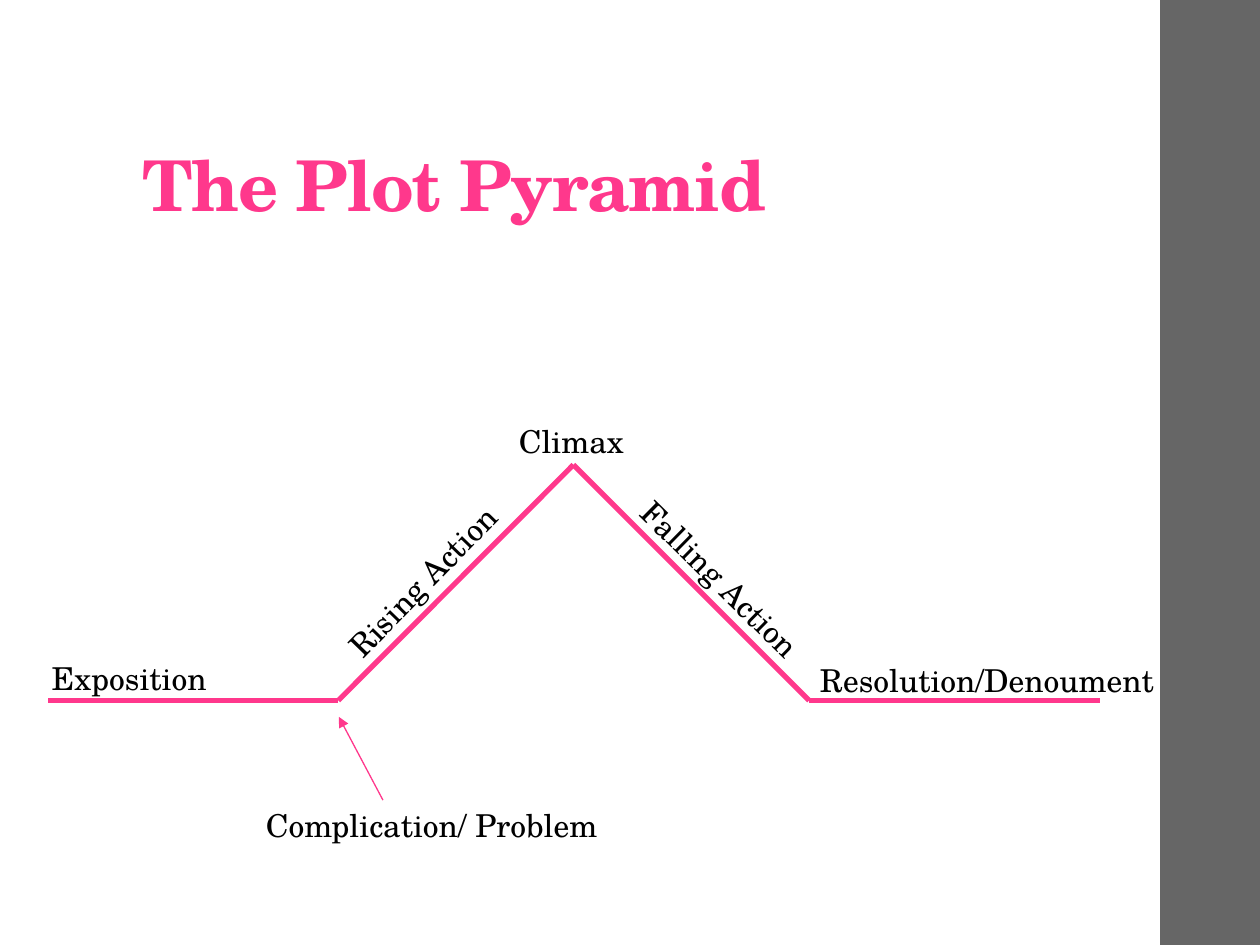
from dataclasses import dataclass
from itertools import pairwise

from pptx import Presentation
from pptx.dml.color import RGBColor
from pptx.enum.shapes import MSO_CONNECTOR, MSO_SHAPE
from pptx.enum.text import MSO_ANCHOR
from pptx.oxml.ns import qn
from pptx.oxml.xmlchemy import OxmlElement
from pptx.shapes.connector import Connector
from pptx.slide import Slide
from pptx.util import Cm, Pt

FONT = "TeX Gyre Schola"
PINK = "FF388C"
BLACK = "000000"
GRAY = "666666"

Point = tuple[float, float]


@dataclass(frozen=True)
class Label:
    text: str
    left: float
    top: float
    width: float
    height: float = 1.02
    rotation: float = 0
    size: float = 18
    color: str = BLACK
    bold: bool = False
    anchor: MSO_ANCHOR = MSO_ANCHOR.TOP
    line_spacing: float = 1.0
    tracking: float = 0


TITLE = Label("The Plot Pyramid", 2.62, 1.02, 20.19, 3.68, size=40, color=PINK,
              bold=True, anchor=MSO_ANCHOR.BOTTOM, line_spacing=0.9, tracking=-0.7)

STAGES = [
    Label("Exposition", 0.79, 13.16, 5.33),
    Label("Complication/ Problem", 5.11, 16.13, 7.42),
    Label("Rising Action", 6.22, 11.02, 4.95, rotation=314.2),
    Label("Climax", 10.21, 8.38, 2.95),
    Label("Falling Action", 12.19, 11.2, 4.75, rotation=44.5),
    Label("Resolution/Denoument", 16.28, 13.21, 7.42),
]

BASE = 14.12
PLOT_LINE = [(0.97, BASE), (6.82, BASE), (11.56, 9.37), (16.31, BASE), (22.17, BASE)]


def rgb(color: str) -> RGBColor:
    return RGBColor.from_string(color)


def add_label(slide: Slide, label: Label) -> None:
    box = slide.shapes.add_textbox(
        Cm(label.left), Cm(label.top), Cm(label.width), Cm(label.height))
    box.rotation = label.rotation
    frame = box.text_frame
    frame.word_wrap = True
    frame.vertical_anchor = label.anchor
    paragraph = frame.paragraphs[0]
    paragraph.line_spacing = label.line_spacing
    paragraph.font.name = FONT
    paragraph.font.size = Pt(label.size)
    paragraph.font.bold = label.bold
    paragraph.font.color.rgb = rgb(label.color)
    run = paragraph.add_run()
    run.text = label.text
    if label.tracking:
        run._r.get_or_add_rPr().set("spc", str(round(label.tracking * 100)))


def add_line(slide: Slide, start: Point, end: Point, width: float) -> Connector:
    line = slide.shapes.add_connector(
        MSO_CONNECTOR.STRAIGHT, *(Cm(value) for value in (*start, *end)))
    line.line.color.rgb = rgb(PINK)
    line.line.width = Pt(width)
    line._element.spPr.append(OxmlElement("a:effectLst"))
    return line


def add_arrow(slide: Slide, start: Point, end: Point, width: float) -> None:
    arrow = add_line(slide, start, end, width)
    head = OxmlElement("a:tailEnd")
    head.set("type", "triangle")
    arrow._element.spPr.find(qn("a:ln")).append(head)


def add_sidebar(slide: Slide) -> None:
    sidebar = slide.shapes.add_shape(
        MSO_SHAPE.RECTANGLE, Cm(23.39), Cm(0), Cm(2.03), Cm(19.05))
    sidebar.shadow.inherit = False
    sidebar.fill.solid()
    sidebar.fill.fore_color.rgb = rgb(GRAY)
    sidebar.line.fill.background()


def main() -> None:
    presentation = Presentation()
    presentation.slide_width = Cm(25.4)
    presentation.slide_height = Cm(19.05)
    slide = presentation.slides.add_slide(presentation.slide_layouts[6])

    add_sidebar(slide)
    add_label(slide, TITLE)
    for start, end in pairwise(PLOT_LINE):
        add_line(slide, start, end, width=3)
    add_arrow(slide, (7.72, 16.13), (6.83, 14.45), width=0.75)
    for stage in STAGES:
        add_label(slide, stage)

    presentation.save("out.pptx")


if __name__ == "__main__":
    main()
